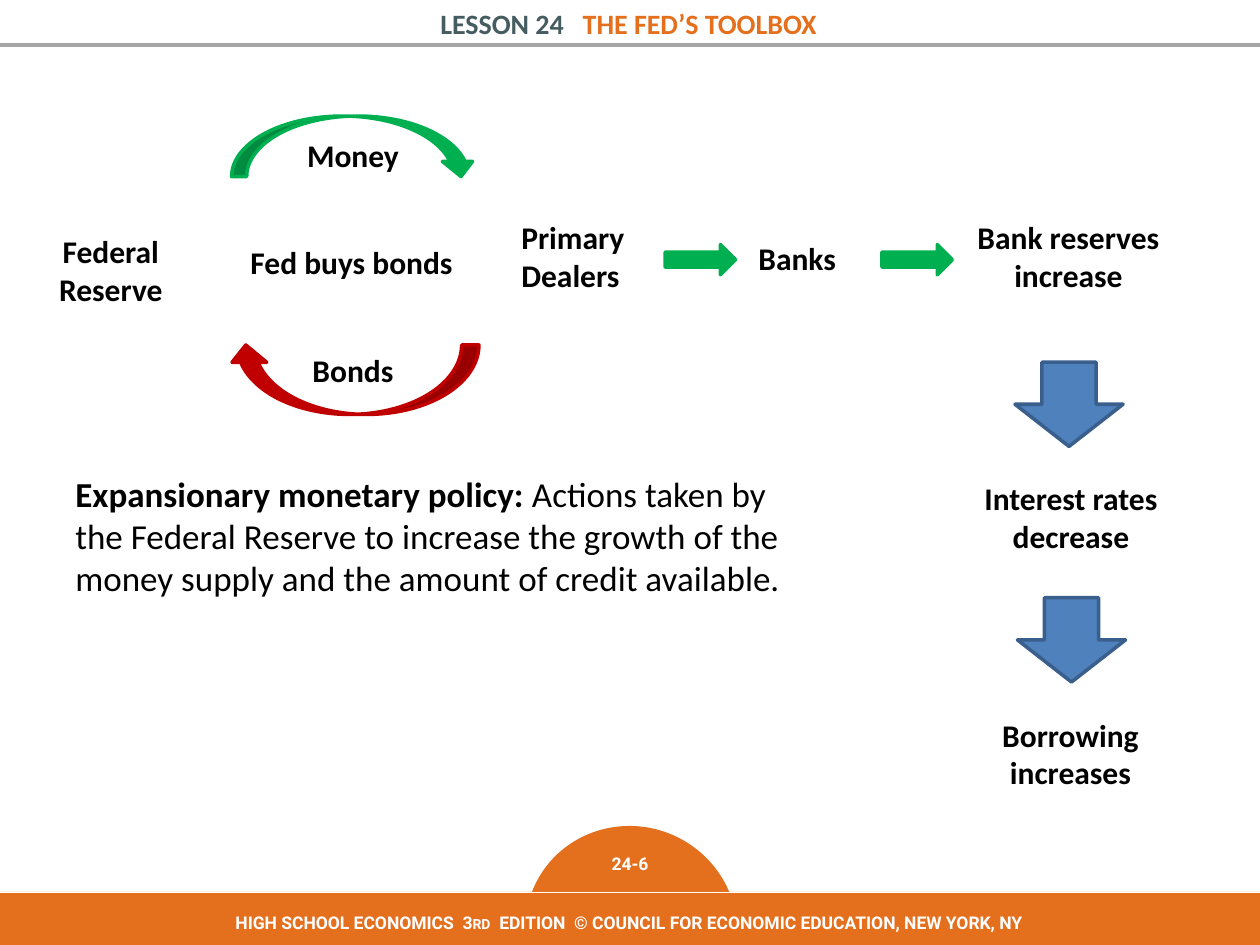
import pptx
import pptx.dml.color
import pptx.enum.shapes
import pptx.enum.text
import pptx.oxml
import pptx.oxml.ns
import pptx.util

Cm, Pt = pptx.util.Cm, pptx.util.Pt
RGBColor = pptx.dml.color.RGBColor
SHAPE = pptx.enum.shapes.MSO_SHAPE
ALIGN = pptx.enum.text.PP_ALIGN

ORANGE = RGBColor(0xE4, 0x70, 0x1E)
SLATE = RGBColor(0x45, 0x5C, 0x61)
GRAY = RGBColor(0xA6, 0xA6, 0xA6)
GREEN = RGBColor(0x00, 0xB0, 0x50)
RED = RGBColor(0xC0, 0x00, 0x00)
BLUE = RGBColor(0x4F, 0x81, 0xBD)
DARK_BLUE = RGBColor(0x3A, 0x5F, 0x8C)
BLACK = RGBColor(0x00, 0x00, 0x00)
WHITE = RGBColor(0xFF, 0xFF, 0xFF)

# Content: a paragraph is a list of (text, run format); boxes are left, top, width, height in cm
HEADER = [[("LESSON 24   ", {}), ("THE FED’S TOOLBOX", {"color": ORANGE})]]
PAGE_NUMBER = [[("24-6", {})]]
FOOTER = [[
    ("HIGH SCHOOL ECONOMICS  3", {}),
    ("rd", {"small_caps": True}),
    ("  EDITION  © COUNCIL FOR ECONOMIC EDUCATION, NEW YORK, NY", {}),
]]
DEFINITION = [[
    ("Expansionary monetary policy: ", {}),
    ("Actions taken by the Federal Reserve to increase the growth of the "
     "money supply and the amount of credit available.", {"bold": False}),
]]

# Flow labels: lines, box, centred, wrapped
LABELS = [
    (["Federal Reserve"], (0.43, 4.55, 3.61, 1.8), True, True),
    (["Fed buys bonds"], (4.8, 4.78, 4.62, 1.02), False, False),
    (["Money"], (5.94, 2.62, 2.39, 1.02), False, False),
    (["Bonds"], (6.05, 6.96, 2.16, 1.02), False, False),
    (["Primary", "Dealers"], (10.26, 4.27, 2.74, 1.8), False, False),
    (["Banks"], (15.04, 4.7, 2.08, 1.02), False, False),
    (["Bank reserves", "increase"], (19.28, 4.27, 4.52, 1.8), True, True),
    (["Interest rates", "decrease"], (19.33, 9.53, 4.52, 1.8), True, True),
    (["Borrowing", "increases"], (19.94, 14.3, 3.28, 1.8), True, False),
]

# Flow arrows: kind, box, fill, line, rotation
ARROWS = [
    (SHAPE.CURVED_DOWN_ARROW, (4.67, 2.34, 4.93, 1.22), GREEN, GREEN, 0),
    (SHAPE.CURVED_LEFT_ARROW, (6.43, 5.13, 1.4, 5.05), RED, RED, 90),
    (SHAPE.RIGHT_ARROW, (13.41, 4.93, 1.42, 0.61), GREEN, GREEN, 0),
    (SHAPE.RIGHT_ARROW, (17.78, 4.93, 1.42, 0.61), GREEN, GREEN, 0),
    (SHAPE.RIGHT_ARROW, (20.7, 7.06, 1.7, 2.18), BLUE, DARK_BLUE, 90),
    (SHAPE.RIGHT_ARROW, (20.75, 11.81, 1.7, 2.18), BLUE, DARK_BLUE, 90),
]


def add_text(slide, paragraphs, box, size=18, font="Calibri", color=BLACK,
             align=ALIGN.CENTER, wrap=True):
    frame = slide.shapes.add_textbox(*map(Cm, box)).text_frame
    frame.word_wrap = wrap
    frame.auto_size = pptx.enum.text.MSO_AUTO_SIZE.SHAPE_TO_FIT_TEXT
    for index, pieces in enumerate(paragraphs):
        paragraph = frame.add_paragraph() if index else frame.paragraphs[0]
        paragraph.alignment = align
        for text, style in pieces:
            run = paragraph.add_run()
            run.text = text
            run.font.name = font
            run.font.size = Pt(size)
            run.font.bold = style.get("bold", True)
            run.font.color.rgb = style.get("color", color)
            if style.get("small_caps"):
                run._r.get_or_add_rPr().set("cap", "small")


def add_figure(slide, kind, box, fill, line, rotation=0, line_width=2):
    figure = slide.shapes.add_shape(kind, *map(Cm, box))
    figure.shadow.inherit = False
    figure.fill.solid()
    figure.fill.fore_color.rgb = fill
    figure.line.color.rgb = line
    figure.line.width = Pt(line_width)
    figure.rotation = rotation
    return figure


def main():
    deck = pptx.Presentation()
    deck.slide_width, deck.slide_height = Cm(25.4), Cm(19.05)
    slide = deck.slides.add_slide(deck.slide_layouts[6])

    # Header
    rule = slide.shapes.add_connector(
        pptx.enum.shapes.MSO_CONNECTOR.STRAIGHT, 0, Cm(0.91), deck.slide_width, Cm(0.91))
    rule.line.color.rgb = GRAY
    rule.line.width = Pt(2)
    rule._element.spPr.append(pptx.oxml.parse_xml(
        "<a:effectLst %s/>" % pptx.oxml.ns.nsdecls("a")))
    add_text(slide, HEADER, (2.41, 0, 20.52, 0.94), size=16, color=SLATE)

    # Footer with page tab
    tab = add_figure(slide, SHAPE.CHORD, (10.67, 16.64, 4.11, 4.22), ORANGE, ORANGE, 112.5)
    tab.adjustments[0], tab.adjustments[1] = 39.96, 148.42
    add_figure(slide, SHAPE.RECTANGLE, (-0.1, 17.98, 25.55, 1.07), ORANGE, WHITE,
               line_width=0.25)
    for paragraphs, box in [(PAGE_NUMBER, (11.43, 17.07, 2.54, 0.69)),
                            (FOOTER, (3.25, 18.26, 18.85, 0.69))]:
        add_text(slide, paragraphs, box, size=10, font="Roboto", color=WHITE)

    # Definition
    add_text(slide, DEFINITION, (1.27, 9.4, 15.04, 3.68), size=20, align=ALIGN.LEFT)

    # Flow of money and bonds
    for arrow in ARROWS:
        add_figure(slide, *arrow)
    for lines, box, centred, wrap in LABELS:
        add_text(slide, [[(line, {})] for line in lines], box, wrap=wrap,
                 align=ALIGN.CENTER if centred else ALIGN.LEFT)

    deck.save("out.pptx")


if __name__ == "__main__":
    main()
